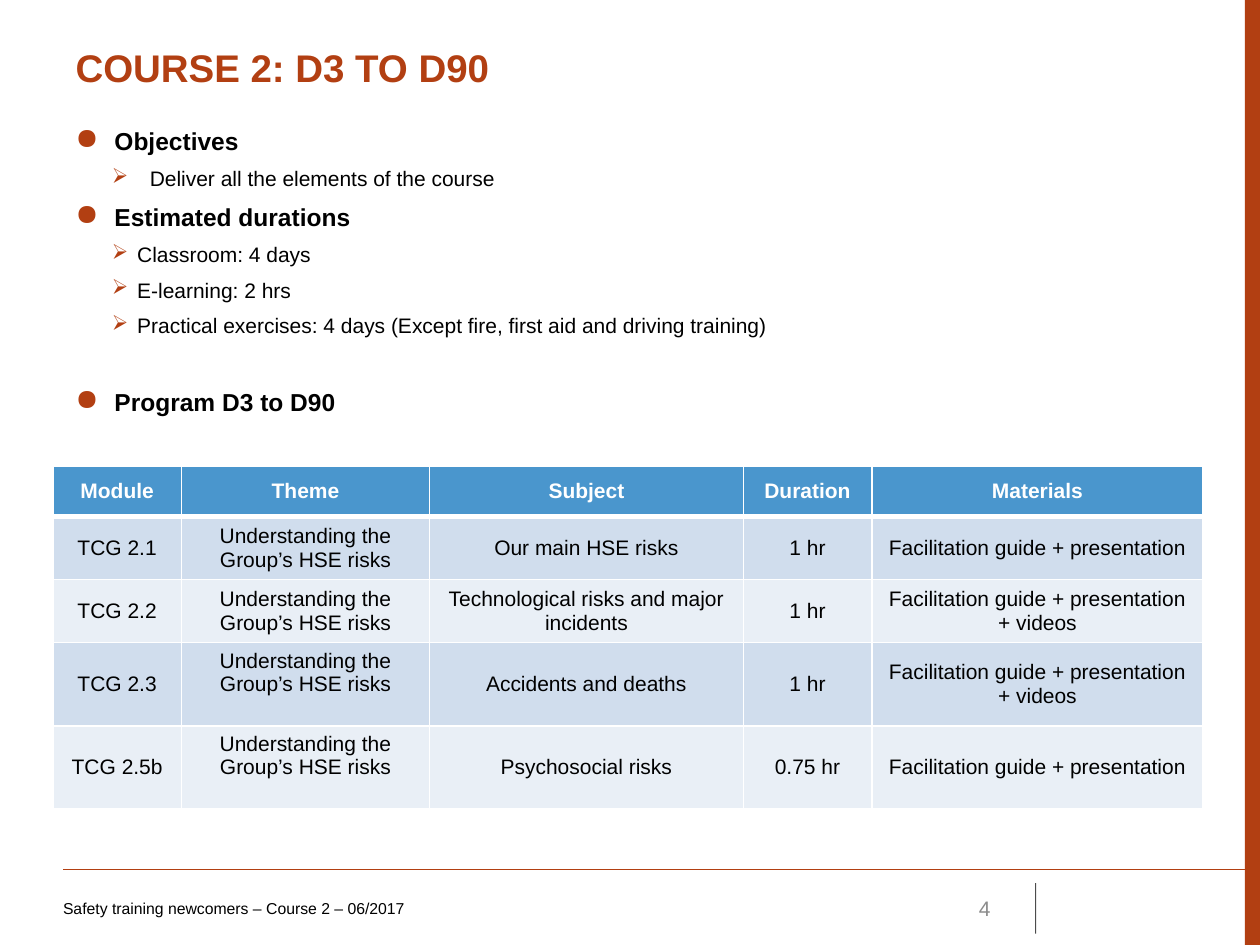
from dataclasses import dataclass
from lxml import etree
from pptx import Presentation
from pptx.dml.color import RGBColor
from pptx.enum.shapes import MSO_CONNECTOR, MSO_SHAPE
from pptx.enum.text import MSO_ANCHOR, PP_ALIGN
from pptx.oxml.ns import qn
from pptx.util import Inches, Pt

LINE = MSO_CONNECTOR.STRAIGHT
RECT = MSO_SHAPE.RECTANGLE
TOP, MIDDLE = MSO_ANCHOR.TOP, MSO_ANCHOR.MIDDLE
LEFT, CENTER, RIGHT = PP_ALIGN.LEFT, PP_ALIGN.CENTER, PP_ALIGN.RIGHT


@dataclass(frozen=True)
class Theme:
    face: str = "Arial"
    rust: str = "B23F12"
    ink: str = "000000"
    gray: str = "8C8C8C"
    white: str = "FFFFFF"
    head: str = "4A96CD"
    bands: tuple = ("D0DDED", "E9EFF6")
    title: int = 22
    main: int = 14
    text: int = 12
    small: int = 9


THEME = Theme()

POINTS = [
    (0, "Objectives", 0.31, 0.31, 3),
    (1, "Deliver all the elements of the course", 0.59, 0.3, 3),
    (0, "Estimated durations", 0.31, 0.31, 3),
    (1, "Classroom: 4 days", 0.49, 0.2, 3),
    (1, "E-learning: 2 hrs", 0.49, 0.2, 3),
    (1, "Practical exercises: 4 days (Except fire, first aid and driving training)", 0.49, 0.2, 3),
    (0, "Program D3 to D90", 0.31, 0.31, 25),
]
GROUP = "Understanding the Group’s HSE risks"
GUIDE = "Facilitation guide + presentation"
ROWS = [
    ("Module", "Theme", "Subject", "Duration", "Materials"),
    ("TCG 2.1", GROUP, "Our main HSE risks", "1 hr", GUIDE),
    ("TCG 2.2", GROUP, "Technological risks and major incidents", "1 hr", GUIDE + " + videos"),
    ("TCG 2.3", GROUP, "Accidents and deaths", "1 hr", GUIDE + " + videos"),
    ("TCG 2.5b", GROUP, "Psychosocial risks", "0.75 hr", GUIDE),
]
WIDTHS = (1.02, 1.97, 2.49, 1.02, 2.63)
HEIGHTS = (0.4, 0.48, 0.48, 0.66, 0.66)
RAISED = {(3, 1), (4, 1)}


def style(para, size, color, bold=False, align=LEFT):
    para.alignment = align
    for run in para.runs:
        font = run.font
        font.name, font.size, font.bold = THEME.face, Pt(size), bold
        font.color.rgb = RGBColor.from_string(color)


def add_text(slide, box, text, size, color, align=LEFT, inset=0.1):
    frame = slide.shapes.add_textbox(*map(Inches, box)).text_frame
    frame.word_wrap = True
    frame.vertical_anchor = MIDDLE
    frame.margin_left = Inches(inset)
    frame.text = text
    style(frame.paragraphs[0], size, color, align=align)


def add_line(slide, start, end, color, width, alpha=100):
    line = slide.shapes.add_connector(LINE, *map(Inches, start + end))
    line.line.color.rgb = RGBColor.from_string(color)
    line.line.width = Pt(width)
    props = line._element.spPr
    if alpha < 100:
        tint = props.find(".//" + qn("a:srgbClr"))
        etree.SubElement(tint, qn("a:alpha"), val=str(alpha * 1000))
    etree.SubElement(props, qn("a:effectLst"))


def add_frame(slide, box):
    left, top, width, height = box
    bar = slide.shapes.add_shape(RECT, *map(Inches, (left + width - 0.12, top, 0.12, height)))
    bar.shadow.inherit = False
    bar.fill.solid()
    bar.fill.fore_color.rgb = RGBColor.from_string(THEME.rust)
    bar.line.fill.background()


def add_title(slide, box, text):
    title = slide.shapes.title
    title.left, title.top, title.width, title.height = map(Inches, box)
    frame = title.text_frame
    frame.vertical_anchor = TOP
    frame.text = text
    style(frame.paragraphs[0], THEME.title, THEME.rust, True)


def add_bullet(para, level, indent, hang):
    props = para._p.get_or_add_pPr()
    props.set("marL", str(Inches(indent)))
    props.set("indent", str(-Inches(hang)))
    tint = etree.SubElement(props, qn("a:buClr"))
    etree.SubElement(tint, qn("a:srgbClr"), val=THEME.rust)
    if level == 0:
        etree.SubElement(props, qn("a:buSzPct"), val="120000")
    etree.SubElement(props, qn("a:buChar"), char="➢" if level else "●")


def add_points(slide, box):
    frame = slide.shapes.add_textbox(*map(Inches, box)).text_frame
    frame.word_wrap = True
    for i, (level, text, indent, hang, before) in enumerate(POINTS):
        para = frame.add_paragraph() if i else frame.paragraphs[0]
        para.text = text
        para.level = level
        para.space_before = Pt(before if i else 0)
        para.space_after = Pt(3)
        add_bullet(para, level, indent, hang)
        style(para, THEME.text if level else THEME.main, THEME.ink, level == 0)


def add_edges(cell, row):
    props = cell._tc.get_or_add_tcPr()
    thick = {0: "lnB", 1: "lnT"}.get(row)
    for i, side in enumerate(("lnL", "lnR", "lnT", "lnB")):
        edge = etree.Element(qn("a:" + side), w=str(Pt(3 if side == thick else 1)))
        fill = etree.SubElement(edge, qn("a:solidFill"))
        etree.SubElement(fill, qn("a:srgbClr"), val=THEME.white)
        props.insert(i, edge)


def add_program(slide, box):
    table = slide.shapes.add_table(len(ROWS), len(WIDTHS), *map(Inches, box)).table
    for col, width in zip(table.columns, WIDTHS):
        col.width = Inches(width)
    for r, texts in enumerate(ROWS):
        table.rows[r].height = Inches(HEIGHTS[r])
        for c, text in enumerate(texts):
            cell = table.cell(r, c)
            cell.text = text
            cell.vertical_anchor = TOP if (r, c) in RAISED else MIDDLE
            cell.fill.solid()
            fill = THEME.bands[(r - 1) % 2] if r else THEME.head
            cell.fill.fore_color.rgb = RGBColor.from_string(fill)
            color = THEME.ink if r else THEME.white
            style(cell.text_frame.paragraphs[0], THEME.text, color, r == 0, CENTER)
            add_edges(cell, r)


def add_footer(slide, box):
    left, top, width, height = box
    low = top + 0.11
    add_line(slide, (left, top), (left + width, top), THEME.rust, 0.75)
    add_line(slide, (left + 7.72, low), (left + 7.72, top + height), THEME.ink, 0.5, 70)
    add_text(slide, (left, low, 6.08, 0.4), "Safety training newcomers – Course 2 – 06/2017",
             THEME.small, THEME.ink, inset=0)
    add_text(slide, (left + 6.67, low, 0.79, 0.4), "4", THEME.text, THEME.gray, RIGHT)


def main():
    deck = Presentation()
    deck.slide_width, deck.slide_height = Inches(10), Inches(7.5)
    slide = deck.slides.add_slide(deck.slide_layouts[5])
    add_frame(slide, (0, 0, 10, 7.5))
    add_footer(slide, (0.5, 6.9, 9.5, 0.51))
    add_title(slide, (0.5, 0.3, 8.99, 0.69), "COURSE 2: D3 TO D90")
    add_points(slide, (0.5, 0.95, 8.99, 2.4))
    add_program(slide, (0.42, 3.7, sum(WIDTHS), sum(HEIGHTS)))
    deck.save("out.pptx")


if __name__ == "__main__":
    main()
